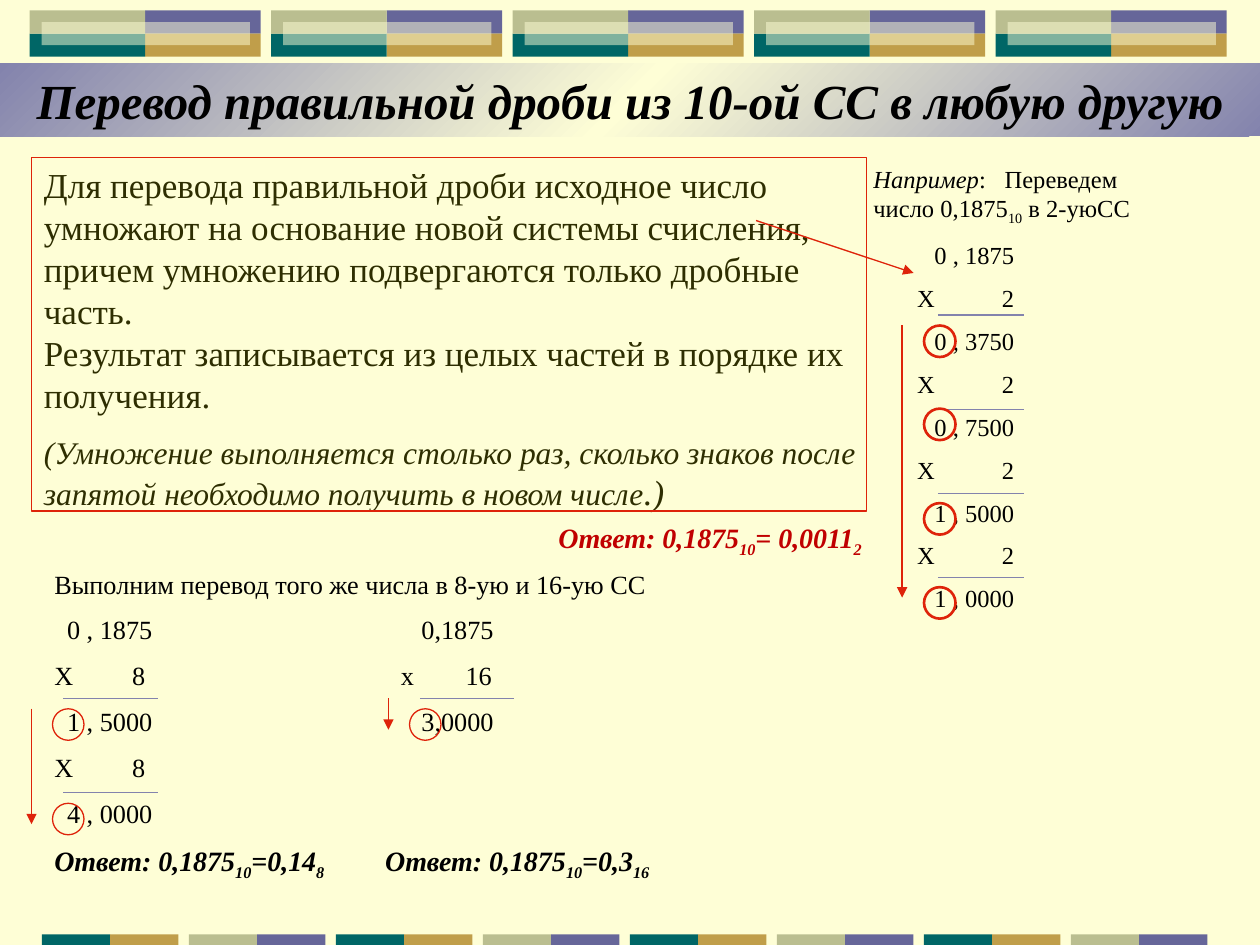
from copy import deepcopy

from lxml import etree
from pptx import Presentation
from pptx.dml.color import RGBColor
from pptx.enum.shapes import MSO_CONNECTOR, MSO_SHAPE
from pptx.enum.text import MSO_ANCHOR, PP_ALIGN
from pptx.oxml.ns import qn
from pptx.util import Pt

RECTANGLE, OVAL = MSO_SHAPE.RECTANGLE, MSO_SHAPE.OVAL
STRAIGHT = MSO_CONNECTOR.STRAIGHT
CENTER, MIDDLE = PP_ALIGN.CENTER, MSO_ANCHOR.MIDDLE

FONT = "Times New Roman"
CREAM = RGBColor(0xFE, 0xFE, 0xD6)
PURPLE = RGBColor(0x66, 0x66, 0x99)
LAVENDER = RGBColor(0x83, 0x83, 0xAD)
GOLD = RGBColor(0xC0, 0x9E, 0x4A)
TEAL = RGBColor(0x00, 0x66, 0x66)
KHAKI = RGBColor(0xBA, 0xBE, 0x90)
OLIVE = RGBColor(0x2E, 0x2E, 0x01)
BLACK = RGBColor(0x00, 0x00, 0x00)
RED = RGBColor(0xDE, 0x23, 0x0A)
DARK_RED = RGBColor(0xC0, 0x00, 0x00)

presentation = Presentation()
presentation.slide_width, presentation.slide_height = Pt(720), Pt(540)
slide = presentation.slides.add_slide(presentation.slide_layouts[5])
slide.background.fill.solid()
slide.background.fill.fore_color.rgb = CREAM


def add_text(left, top, width, height, color, paragraphs):
    frame = slide.shapes.add_textbox(Pt(left), Pt(top), Pt(width), Pt(height)).text_frame
    frame.word_wrap = True
    for index, (tabs, runs) in enumerate(paragraphs):
        paragraph = frame.add_paragraph() if index else frame.paragraphs[0]
        paragraph.space_before = Pt(round(0.55 * runs[0][1], 1) if index else 0)
        if tabs:
            tab_list = etree.SubElement(paragraph._p.get_or_add_pPr(), qn("a:tabLst"))
            for position, alignment in tabs:
                etree.SubElement(tab_list, qn("a:tab"), pos=str(Pt(position)), algn=alignment)
        for text, size, style in runs:
            run = paragraph.add_run()
            run.text = text
            run.font.name, run.font.size = FONT, Pt(size)
            run.font.color.rgb = color
            run.font.bold, run.font.italic = "bold" in style, "italic" in style
            if "sub" in style:
                run._r.get_or_add_rPr().set("baseline", "-25000")


def add_line(x1, y1, x2, y2, color, width=0.75, arrow=False):
    connector = slide.shapes.add_connector(STRAIGHT, Pt(x1), Pt(y1), Pt(x2), Pt(y2))
    connector.line.color.rgb, connector.line.width = color, Pt(width)
    if arrow:
        etree.SubElement(connector.line._get_or_add_ln(), qn("a:tailEnd"), type="triangle")
    etree.SubElement(connector._element.spPr, qn("a:effectLst"))


bars = []
for unit in range(5):
    x = 17 + 138 * unit
    bars += [
        (x + 66, 6, 66, 13.2, PURPLE, False),
        (x + 66, 19.2, 66, 13.2, GOLD, False),
        (x, 19.2, 66, 13.2, TEAL, False),
        (x, 6, 66, 13.2, KHAKI, False),
        (x + 6.8, 12.6, 119, 13.2, CREAM, True),
    ]
for unit in range(8):
    x = 24 + 84 * unit
    left_color, right_color = (KHAKI, PURPLE) if unit % 2 else (TEAL, GOLD)
    bars += [(x, 534, 39, 6, left_color, False), (x + 39, 534, 39, 6, right_color, False)]
for left, top, width, height, color, translucent in bars:
    bar = slide.shapes.add_shape(RECTANGLE, Pt(left), Pt(top), Pt(width), Pt(height))
    bar.shadow.inherit = False
    bar.line.fill.background()
    bar.fill.solid()
    bar.fill.fore_color.rgb = color
    if translucent:
        fill_color = bar._element.spPr.find(qn("a:solidFill"))[0]
        etree.SubElement(fill_color, qn("a:alpha"), val="50000")

title = slide.shapes.title
title.left, title.top, title.width, title.height = Pt(0), Pt(36), Pt(720), Pt(42)
title.fill.gradient()
title.fill.gradient_angle = 315
stops = title.fill.gradient_stops
for stop, position in zip(stops, (0, 1)):
    stop.color.rgb, stop.position = LAVENDER, position
stop_list = title._element.spPr.find(qn("a:gradFill")).find(qn("a:gsLst"))
stop_list.insert(1, deepcopy(stop_list[0]))
middle_stop = title.fill.gradient_stops[1]
middle_stop.color.rgb, middle_stop.position = CREAM, 0.5
title.text_frame.text = "Перевод правильной дроби из 10-ой СС в любую другую"
title.text_frame.word_wrap = True
title.text_frame.vertical_anchor = MIDDLE
title.text_frame.paragraphs[0].alignment = CENTER
title_font = title.text_frame.paragraphs[0].runs[0].font
title_font.name, title_font.size = FONT, Pt(28)
title_font.bold = title_font.italic = True
title_font.color.rgb = BLACK

add_text(18, 90, 472, 104, OLIVE, [
    ([], [("Для перевода правильной дроби исходное число умножают на основание новой системы "
           "счисления, причем умножению подвергаются только дробные часть.", 20, "")]),
])
add_text(18, 186, 486, 113, OLIVE, [
    ([], [("Результат записывается из целых частей в порядке их получения.", 20, "")]),
    ([], [("(Умножение выполняется столько раз, сколько знаков после запятой необходимо "
           "получить в новом числе", 18, "italic"), (".)", 20, "italic")]),
])

example = [([(75, "l")], [
    ("Например", 14, "italic"), (":\tПереведем число 0,1875", 14, ""),
    ("10", 14, "sub"), (" в 2-уюСС", 14, ""),
])]
example_tabs = [(25, "l"), (80.5, "r")]
products = ["0 , 1875", "0 , 3750", "0 , 7500", "1 , 5000", "1 , 0000"]
for index, product in enumerate(products):
    if index:
        example.append((example_tabs, [("\tХ\t2", 14, "")]))
    example.append((example_tabs, [("\t\t" + product, 14, "")]))
add_text(492, 90, 168, 270, BLACK, example)

answer = "bold italic"
subscript = "bold italic sub"
add_text(312, 294, 204, 27, DARK_RED, [([], [
    ("Ответ: 0,1875", 16, answer), ("10", 16, subscript),
    ("= 0,0011", 16, answer), ("2", 16, subscript),
])])

product_tabs = [(56, "r"), (251, "r")]
factor_tabs = [(52, "r"), (198, "l"), (250, "r")]
add_text(24, 321, 366, 191, BLACK, [
    ([], [("Выполним перевод того же числа в 8-ую и 16-ую СС", 15, "")]),
    (product_tabs, [("\t0 , 1875\t0,1875", 15, "")]),
    (factor_tabs, [("Х\t8\tх\t16", 15, "")]),
    (product_tabs, [("\t1 , 5000\t3,0000", 15, "")]),
    (factor_tabs, [("Х\t8", 15, "")]),
    (product_tabs, [("\t4 , 0000", 15, "")]),
    ([(189, "l")], [
        ("Ответ: 0,1875", 16, answer), ("10", 16, subscript),
        ("=0,14", 16, answer), ("8", 16, subscript),
        ("\tОтвет: 0,1875", 16, answer), ("10", 16, subscript),
        ("=0,3", 16, answer), ("16", 16, subscript),
    ]),
])

for y in (180, 234, 282, 330):
    add_line(536, y, 585, y, LAVENDER)
for x, y in ((36, 399), (36, 453), (240, 399)):
    add_line(x, y, x + 54, y, LAVENDER)

outlines = [(RECTANGLE, 18, 90, 477, 202, 0.75)]
outlines += [(OVAL, 528, top, 18, 18, 1.5) for top in (186, 233.5, 287.5, 335.5)]
outlines += [(OVAL, left, top, 18, 18, 0.75) for left, top in ((30, 405), (30, 459), (234, 405))]
for kind, left, top, width, height, weight in outlines:
    outline = slide.shapes.add_shape(kind, Pt(left), Pt(top), Pt(width), Pt(height))
    outline.shadow.inherit = False
    outline.fill.background()
    outline.line.color.rgb, outline.line.width = RED, Pt(weight)

add_line(515.5, 186, 515.5, 341.5, RED, 1.5, arrow=True)
add_line(432, 126, 522, 156, RED, arrow=True)
add_line(222, 399, 222, 417, RED, arrow=True)
add_line(18, 405, 18, 471, RED, arrow=True)

presentation.save("out.pptx")
